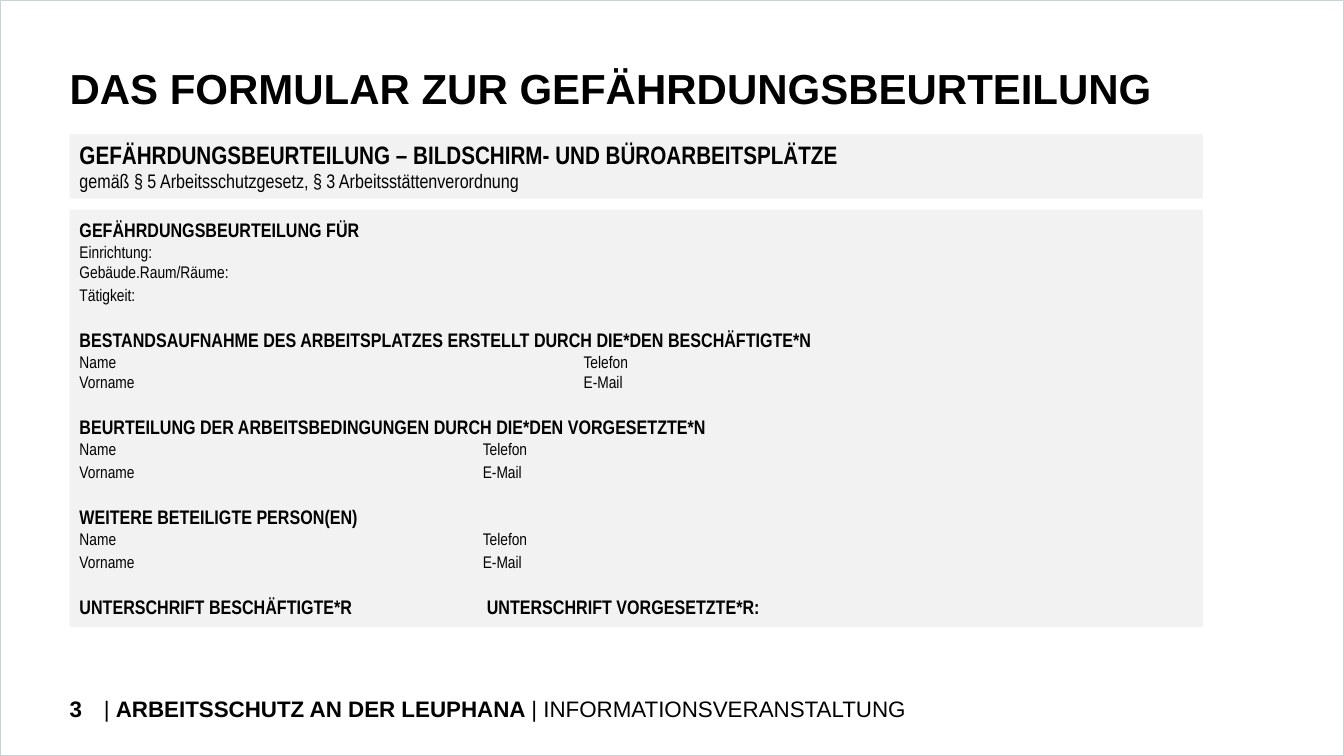
import pptx
import pptx.util
import pptx.dml.color
import pptx.enum.shapes
import pptx.enum.text
import pptx.oxml.ns
import lxml.etree

THEME = {
    "text": "000000", "panel": "F2F2F2", "frame": "C9D2D5",
    "font": "Arial", "narrow": "Arial Narrow",
    "title": 30, "form": 18, "footer": 16, "head": 14, "field": 12,
}
RGB = pptx.dml.color.RGBColor.from_string
INCH = pptx.util.Inches
PT = pptx.util.Pt
ANCHOR = pptx.enum.text.MSO_ANCHOR
W, H = 13.33, 7.5
LEFT, BODY_W = 0.69, 11.24
NUMBER_W = 0.34
PAD_X, PAD_Y = 0.1, 0.05

prs = pptx.Presentation()
prs.slide_width, prs.slide_height = INCH(W), INCH(H)
s = prs.slides.add_slide(prs.slide_layouts[6])


def add_box(left, top, width, height, anchor, pad_x, pad_y, fill=None, line=None):
    sp = s.shapes.add_shape(pptx.enum.shapes.MSO_SHAPE.RECTANGLE,
                            INCH(left), INCH(top), INCH(width), INCH(height))
    sp.shadow.inherit = False
    for part, color in ((sp.fill, fill), (sp.line.fill, line)):
        if color:
            part.solid()
            part.fore_color.rgb = RGB(THEME[color])
        else:
            part.background()
    tf = sp.text_frame
    tf.word_wrap = True
    tf.vertical_anchor = anchor
    tf.margin_left = tf.margin_right = INCH(pad_x)
    tf.margin_top = tf.margin_bottom = INCH(pad_y)
    return sp


def add_line(tf, runs, size, font, before=0, tab=None):
    p = tf.paragraphs[0]
    if p.runs:
        p = tf.add_paragraph()
    p.alignment = pptx.enum.text.PP_ALIGN.LEFT
    if before:
        p.space_before = PT(before)
    if tab:
        tabs = lxml.etree.SubElement(p._p.get_or_add_pPr(), pptx.oxml.ns.qn("a:tabLst"))
        lxml.etree.SubElement(tabs, pptx.oxml.ns.qn("a:tab"),
                              pos=str(INCH(tab)), algn="l")
    for text, bold in runs:
        r = p.add_run()
        r.text = text
        r.font.size = PT(THEME[size])
        r.font.name = THEME[font]
        r.font.bold = bold
        r.font.color.rgb = RGB(THEME["text"])
    return p


frame = add_box(0, 0, W, H, ANCHOR.TOP, 0, 0, line="frame")
frame.line.width = PT(1)

title = add_box(LEFT, 0.7, W - 2 * LEFT, 0.45, ANCHOR.TOP, 0, 0)
p = add_line(title.text_frame, [("DAS FORMULAR ZUR GEFÄHRDUNGSBEURTEILUNG", True)],
             "title", "font")
p.line_spacing = PT(THEME["title"])

footer = [
    (LEFT, NUMBER_W, [("3", True)]),
    (LEFT + NUMBER_W, 9.65, [("| ", False), ("ARBEITSSCHUTZ AN DER LEUPHANA ", True),
                             ("| INFORMATIONSVERANSTALTUNG", False)]),
]
for left, width, runs in footer:
    sp = add_box(left, 6.83, width, 0.4, ANCHOR.MIDDLE, 0, PAD_Y)
    add_line(sp.text_frame, runs, "footer", "font")

form = add_box(LEFT, 1.33, BODY_W, 0.64, ANCHOR.TOP, PAD_X, PAD_Y, fill="panel")
for text, size, bold in (
    ("GEFÄHRDUNGSBEURTEILUNG – BILDSCHIRM- UND BÜROARBEITSPLÄTZE", "form", True),
    ("gemäß § 5 Arbeitsschutzgesetz, § 3 Arbeitsstättenverordnung", "head", False),
):
    add_line(form.text_frame, [(text, bold)], size, "narrow")

CONTACT = ["Name\tTelefon", "Vorname\tE-Mail"]
sections = [
    ("GEFÄHRDUNGSBEURTEILUNG FÜR",
     ["Einrichtung:", "Gebäude.Raum/Räume:", "Tätigkeit:"], None, 2),
    ("BESTANDSAUFNAHME DES ARBEITSPLATZES ERSTELLT DURCH DIE*DEN BESCHÄFTIGTE*N",
     CONTACT, 5, 0),
    ("BEURTEILUNG DER ARBEITSBEDINGUNGEN DURCH DIE*DEN VORGESETZTE*N", CONTACT, 4, 2),
    ("WEITERE BETEILIGTE PERSON(EN)", CONTACT, 4, 2),
    ("UNTERSCHRIFT BESCHÄFTIGTE*R\tUNTERSCHRIFT VORGESETZTE*R:", [], 4.04, 0),
]
panel = add_box(LEFT, 2.08, BODY_W, 4.14, ANCHOR.MIDDLE, PAD_X, PAD_Y, fill="panel")
for i, (heading, fields, tab, last_gap) in enumerate(sections):
    add_line(panel.text_frame, [(heading, True)], "head", "narrow", 16.5 if i else 0, tab)
    for field in fields:
        gap = last_gap if field == fields[-1] else 0
        add_line(panel.text_frame, [(field, False)], "field", "narrow", gap, tab)

prs.save("out.pptx")
